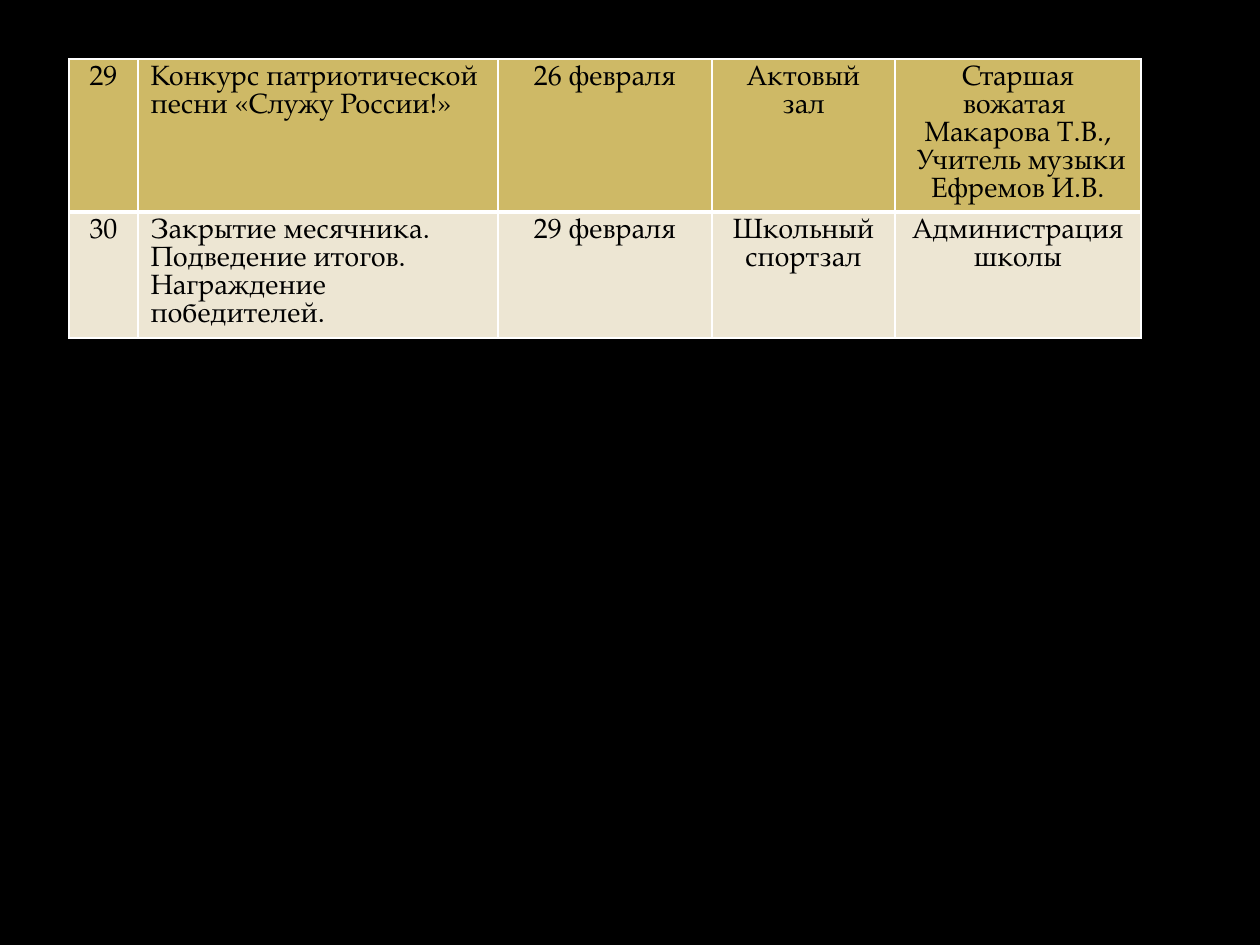
import pptx
import pptx.dml.color
import pptx.enum.text
import pptx.oxml
import pptx.oxml.ns
import pptx.util

PX = pptx.util.Inches(1) / 126
FONT = "TeX Gyre Pagella"
BLACK, WHITE = "000000", "FFFFFF"
ROW_FILLS = ["CEB966", "EDE6D3"]
COLUMN_WIDTHS = [69, 360, 214, 183, 246]
ROW_HEIGHTS = [153, 126]
EVENT_COLUMN = 1
EVENTS = [
    ["29", "Конкурс патриотической песни «Служу России!»", "26 февраля",
     "Актовый зал",
     "Старшая вожатая \nМакарова Т.В.,\n Учитель музыки Ефремов И.В."],
    ["30", "Закрытие месячника. Подведение итогов. Награждение победителей.",
     "29 февраля", "Школьный спортзал", "Администрация школы"],
]


def px(length):
    return pptx.util.Emu(round(length * PX))


def paint(fill, color):
    fill.solid()
    fill.fore_color.rgb = pptx.dml.color.RGBColor.from_string(color)


def set_borders(cell, widths):
    """Draw white cell borders; widths maps L, R, T, B to points, in that order."""
    properties = cell._tc.get_or_add_tcPr()
    for index, (side, width) in enumerate(widths.items()):
        border = pptx.oxml.parse_xml(
            f'<a:ln{side} {pptx.oxml.ns.nsdecls("a")} w="{pptx.util.Pt(width)}">'
            f'<a:solidFill><a:srgbClr val="{WHITE}"/></a:solidFill></a:ln{side}>')
        properties.insert(index, border)


def write_cell(cell, text, alignment):
    cell.text_frame.text = text
    for paragraph in cell.text_frame.paragraphs:
        paragraph.alignment = alignment
        paragraph.line_spacing = pptx.util.Pt(16)
        for run in paragraph.runs:
            run.font.name = FONT
            run.font.size = pptx.util.Pt(16)
            paint(run.font.fill, BLACK)


def add_events_table(slide, left, top):
    table = slide.shapes.add_table(
        len(EVENTS), len(COLUMN_WIDTHS), px(left), px(top),
        px(sum(COLUMN_WIDTHS)), px(sum(ROW_HEIGHTS))).table
    for column, width in zip(table.columns, COLUMN_WIDTHS):
        column.width = px(width)
    for row_index, (row, height) in enumerate(zip(table.rows, ROW_HEIGHTS)):
        row.height = px(height)
        top_width, bottom_width = (1, 3) if row_index == 0 else (3, 1)
        for column_index, cell in enumerate(row.cells):
            align = pptx.enum.text.PP_ALIGN
            alignment = align.LEFT if column_index == EVENT_COLUMN else align.CENTER
            write_cell(cell, EVENTS[row_index][column_index], alignment)
            paint(cell.fill, ROW_FILLS[row_index])
            set_borders(cell, {"L": 1, "R": 1, "T": top_width, "B": bottom_width})


def main():
    presentation = pptx.Presentation()
    presentation.slide_width = px(1260)
    presentation.slide_height = px(945)
    slide = presentation.slides.add_slide(presentation.slide_layouts[6])
    paint(slide.background.fill, BLACK)
    add_events_table(slide, 69, 59)
    presentation.save("out.pptx")


if __name__ == "__main__":
    main()
